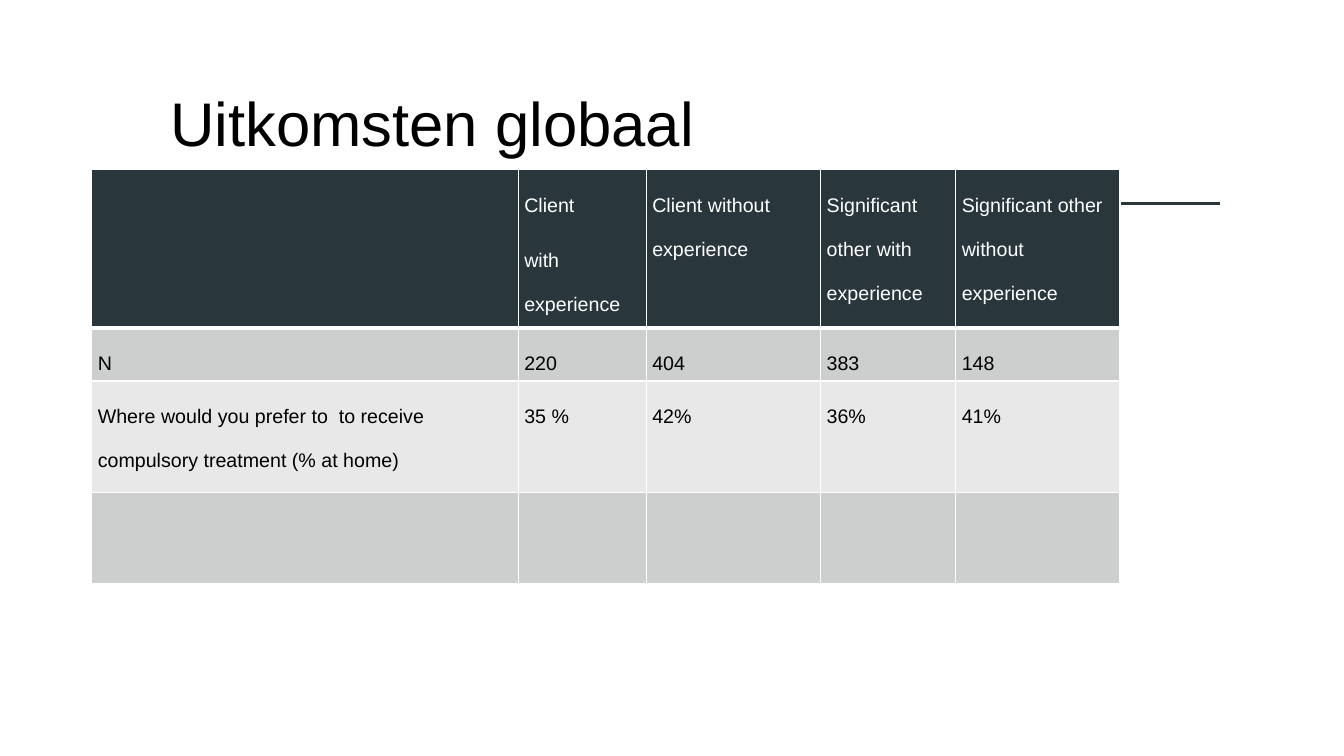
from pptx import Presentation
from pptx.dml.color import RGBColor
from pptx.enum.shapes import MSO_CONNECTOR
from pptx.enum.text import MSO_ANCHOR
from pptx.oxml.ns import qn
from pptx.util import Pt
from lxml.etree import SubElement

SCALE = 9144
DARK, WHITE, BLACK = "29363B", "FFFFFF", "000000"
BANDS = [DARK, "CDCECE", "E8E8E8", "CDCECE"]
COLS = [423, 127, 173, 134, 163]
ROWS = [148, 50, 111, 90]
CELLS = [
    ["", "Client\nwith experience", "Client without experience",
     "Significant other with experience", "Significant other without experience"],
    ["N", "220", "404", "383", "148"],
    ["Where would you prefer to  to receive compulsory treatment (% at home)",
     "35 %", "42%", "36%", "41%"],
    [""] * 5,
]


def px(n):
    return n * SCALE


def rgb(code):
    return RGBColor.from_string(code)


class Page:
    def __init__(self, deck, font):
        self.font = font
        self.slide = deck.slides.add_slide(deck.slide_layouts[6])
        self.slide.background.fill.solid()
        self.slide.background.fill.fore_color.rgb = rgb(WHITE)

    def runs(self, frame, text, size, tint, lead, after=0):
        frame.word_wrap = True
        for i, part in enumerate(text.split("\n")):
            para = frame.add_paragraph() if i else frame.paragraphs[0]
            para.line_spacing = lead
            para.space_after = Pt(after)
            run = para.add_run()
            run.text = part
            run.font.name = self.font
            run.font.size = Pt(size)
            run.font.color.rgb = rgb(tint)

    def text(self, x, y, w, h, text, size, tint, lead):
        box = self.slide.shapes.add_textbox(px(x), px(y), px(w), px(h))
        box.text_frame.vertical_anchor = MSO_ANCHOR.TOP
        self.runs(box.text_frame, text, size, tint, lead)

    def line(self, x, y, end, tint, width):
        rule = self.slide.shapes.add_connector(
            MSO_CONNECTOR.STRAIGHT, px(x), px(y), px(end), px(y))
        rule.line.color.rgb = rgb(tint)
        rule.line.width = Pt(width)
        SubElement(rule._element.spPr, qn("a:effectLst"))

    def edge(self, cell, side, tint, width):
        props = cell._tc.get_or_add_tcPr()
        line = SubElement(props, qn(f"a:ln{side}"), w=str(Pt(width)))
        fill = SubElement(line, qn("a:solidFill"))
        SubElement(fill, qn("a:srgbClr"), val=tint)

    def cell(self, cell, text, band, head):
        for side in "LRTB":
            self.edge(cell, side, WHITE, 3 if head and side == "B" else 1)
        cell.fill.solid()
        cell.fill.fore_color.rgb = rgb(band)
        cell.margin_left = cell.margin_right = px(6)
        cell.margin_top = cell.margin_bottom = px(3)
        if text:
            self.runs(cell.text_frame, text, 14, WHITE if head else BLACK, 2.0, 8)

    def table(self, x, y, cols, rows, cells, bands):
        grid = self.slide.shapes.add_table(
            len(rows), len(cols), px(x), px(y), px(sum(cols)), px(sum(rows))).table
        grid.first_row = grid.horz_banding = False
        for col, w in zip(grid.columns, cols):
            col.width = px(w)
        for r, h in enumerate(rows):
            grid.rows[r].height = px(h)
            for c, text in enumerate(cells[r]):
                self.cell(grid.cell(r, c), text, bands[r], r == 0)


def main():
    deck = Presentation()
    deck.slide_width, deck.slide_height = px(1333), px(750)
    page = Page(deck, "Arial")
    page.line(159, 202, 1210, DARK, 2.5)
    page.text(159, 88, 1050, 115, "Uitkomsten globaal", 44, BLACK, 0.9)
    page.table(91, 168, COLS, ROWS, CELLS, BANDS)
    deck.save("out.pptx")


if __name__ == "__main__":
    main()
